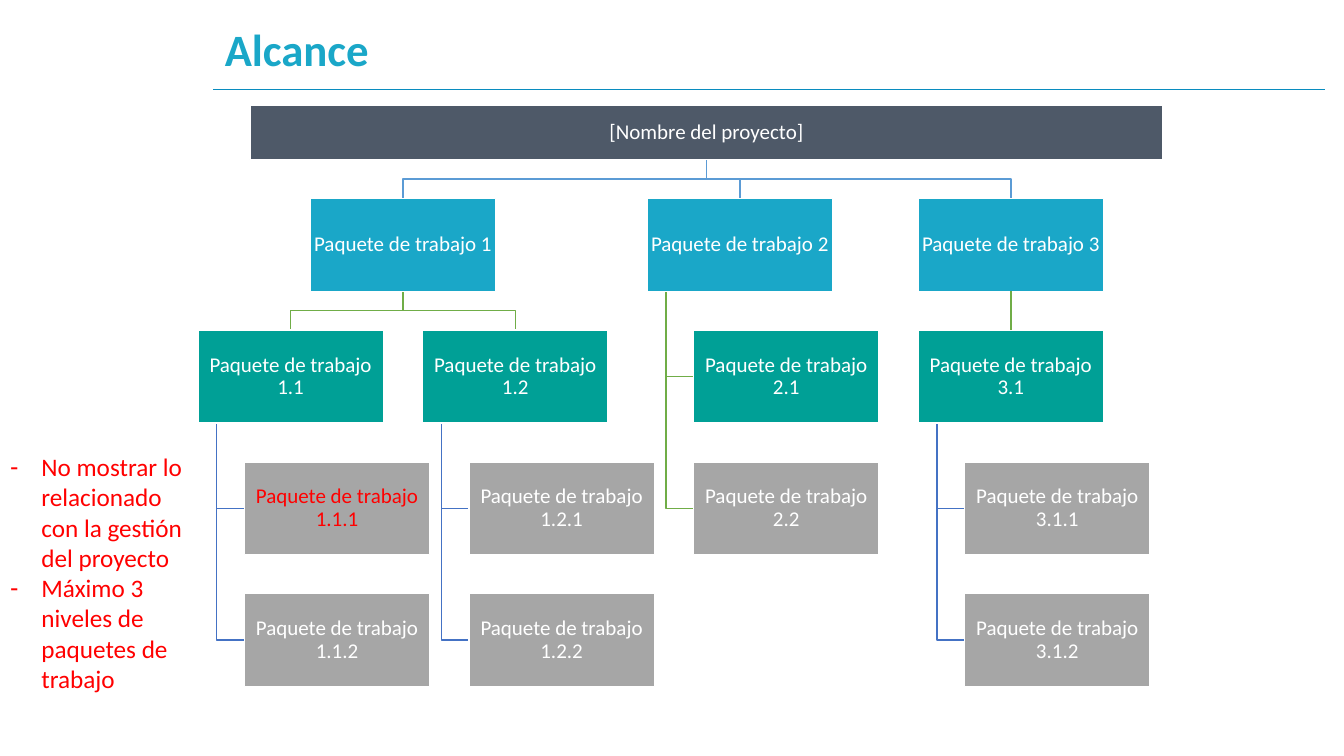
import pptx
import pptx.util
import pptx.dml.color
import pptx.enum.shapes
import pptx.enum.text
import pptx.oxml
import pptx.oxml.ns

Cm, Pt = pptx.util.Cm, pptx.util.Pt
ALIGN = pptx.enum.text.PP_ALIGN
ANCHOR = pptx.enum.text.MSO_ANCHOR
FIT = pptx.enum.text.MSO_AUTO_SIZE

TITLE = "Alcance"
ROOT = "[Nombre del proyecto]"
LABEL = "Paquete de trabajo "
NOTES = [
    "No mostrar lo relacionado con la gestión del proyecto",
    "Máximo 3 niveles de paquetes de trabajo",
]
# code: (column, indent steps, row)
NODES = {
    "1": (0.5, 0, 0),
    "1.1": (0, 0, 1),
    "1.1.1": (0, 1, 2),
    "1.1.2": (0, 1, 3),
    "1.2": (1, 0, 1),
    "1.2.1": (1, 1, 2),
    "1.2.2": (1, 1, 3),
    "2": (2, 0, 0),
    "2.1": (2, 1, 1),
    "2.2": (2, 1, 2),
    "3": (3, 1, 0),
    "3.1": (3, 1, 1),
    "3.1.1": (3, 2, 2),
    "3.1.2": (3, 2, 3),
}
MARKED = "1.1.1"
HEX = {
    "title": "1AA7C8", "rule": "098CBF", "root": "4E5968",
    "cyan": "1AA7C8", "teal": "00A096", "grey": "A6A6A6",
    "white": "FFFFFF", "red": "FF0000",
    "sky": "5B9BD5", "green": "70AD47", "blue": "4472C4",
}
FILLS = ["cyan", "teal", "grey", "grey"]   # by row
LINKS = ["sky", "green", "blue"]           # by level

# Lengths in cm
LEFT, TOP = 4.99, 5.0
WIDE, HIGH = 4.67, 2.34
STEP_X, STEP_Y = 5.66, 3.32
INDENT, STEM, GAP = 1.17, 0.47, 0.98
HEAD = (6.3, 2.65, 23.01, 1.37)

BOX = {"word_wrap": True, "vertical_anchor": ANCHOR.MIDDLE,
       "margin_left": Cm(0.03), "margin_right": Cm(0.03),
       "margin_top": Cm(0.03), "margin_bottom": Cm(0.03)}
MID = {"alignment": ALIGN.CENTER, "line_spacing": 0.9}


def rgb(name):
    return pptx.dml.color.RGBColor.from_string(HEX[name])


def apply(item, values):
    for key, value in values.items():
        setattr(item, key, value)


def write(para, text, size, color, bold=False):
    run = para.add_run()
    run.text = text
    apply(run.font, {"name": "Calibri", "size": Pt(size), "bold": bold})
    run.font.color.rgb = rgb(color)


def place(shape, *cms):
    apply(shape, dict(zip(("left", "top", "width", "height"), map(Cm, cms))))


def stroke(shape, color, width):
    shape.line.color.rgb = rgb(color)
    shape.line.width = Pt(width)


def join(color, width, *ends):
    line = slide.shapes.add_connector(
        pptx.enum.shapes.MSO_CONNECTOR.STRAIGHT, *map(Cm, ends))
    stroke(line, color, width)
    props = line._element.spPr
    props.append(props.makeelement(pptx.oxml.ns.qn("a:effectLst"), {}))
    return line


def trace(points, color):
    """Draw an open bent line through points in cm."""
    start, *rest = [(Cm(x), Cm(y)) for x, y in points]
    pen = slide.shapes.build_freeform(*start)
    pen.add_line_segments(rest, close=False)
    shape = pen.convert_to_shape()
    shape.shadow.inherit = False
    shape.fill.background()
    stroke(shape, color, 1)


def block(area, text, fill, ink="white"):
    shape = slide.shapes.add_shape(
        pptx.enum.shapes.MSO_SHAPE.RECTANGLE, *map(Cm, area))
    shape.shadow.inherit = False
    shape.fill.solid()
    shape.fill.fore_color.rgb = rgb(fill)
    stroke(shape, "white", 1)
    apply(shape.text_frame, BOX)
    para = shape.text_frame.paragraphs[0]
    apply(para, MID)
    write(para, text, 15, ink)
    return shape


def area(code):
    col, steps, row = NODES[code]
    return (LEFT + col * STEP_X + steps * INDENT, TOP + row * STEP_Y,
            WIDE, HIGH)


deck = pptx.Presentation()
deck.slide_width, deck.slide_height = Cm(33.87), Cm(19.05)
slide = deck.slides.add_slide(deck.slide_layouts[1])
title, body = slide.placeholders

join("rule", 0.5, 5.38, 2.24, 33.4, 2.24)
place(title, 5.41, 0.58, 27.97, 1.45)
apply(title.text_frame, {"vertical_anchor": ANCHOR.MIDDLE,
                         "auto_size": FIT.NONE, "word_wrap": True})
para = title.text_frame.paragraphs[0]
apply(para, {"alignment": ALIGN.LEFT, "line_spacing": 0.9})
write(para, TITLE, 32, "title", True)

# Links go behind the boxes; straight ones wait until the boxes exist
direct = []
for code in NODES:
    parent = code.rpartition(".")[0]
    color = LINKS[code.count(".")]
    left, top, wide, high = area(code)
    x0, y0, w0, h0 = area(parent) if parent else HEAD
    base, mid, mid0 = y0 + h0, left + wide / 2, x0 + w0 / 2
    if parent and NODES[code][1] > NODES[parent][1]:
        side, half = x0 + STEM, top + high / 2
        trace([(side, base), (side, half), (left, half)], color)
    elif mid == mid0:
        direct.append((parent, code, color, mid, base, mid, top))
    else:
        bend = base + GAP / 2
        trace([(mid0, base), (mid0, bend), (mid, bend), (mid, top)], color)

block(HEAD, ROOT, "root")
boxes = {code: block(area(code), LABEL + code, FILLS[NODES[code][2]],
                     "red" if code == MARKED else "white")
         for code in NODES}
for parent, code, color, *ends in direct:
    line = join(color, 1, *ends)
    line.begin_connect(boxes[parent], 2)
    line.end_connect(boxes[code], 0)

place(body, 0, 11.25, 4.93, 6.4)
apply(body.text_frame, {"word_wrap": True, "vertical_anchor": ANCHOR.TOP,
                        "auto_size": FIT.SHAPE_TO_FIT_TEXT})
for i, note in enumerate(NOTES):
    frame = body.text_frame
    para = frame.add_paragraph() if i else frame.paragraphs[0]
    props = para._p.get_or_add_pPr()
    props.set("marL", str(Cm(0.79)))
    props.set("indent", str(-Cm(0.79)))
    props.append(props.makeelement(pptx.oxml.ns.qn("a:buChar"), {"char": "-"}))
    apply(para, {"space_before": Pt(0), "line_spacing": 1.0})
    write(para, note, 18, "red")

deck.save("out.pptx")
